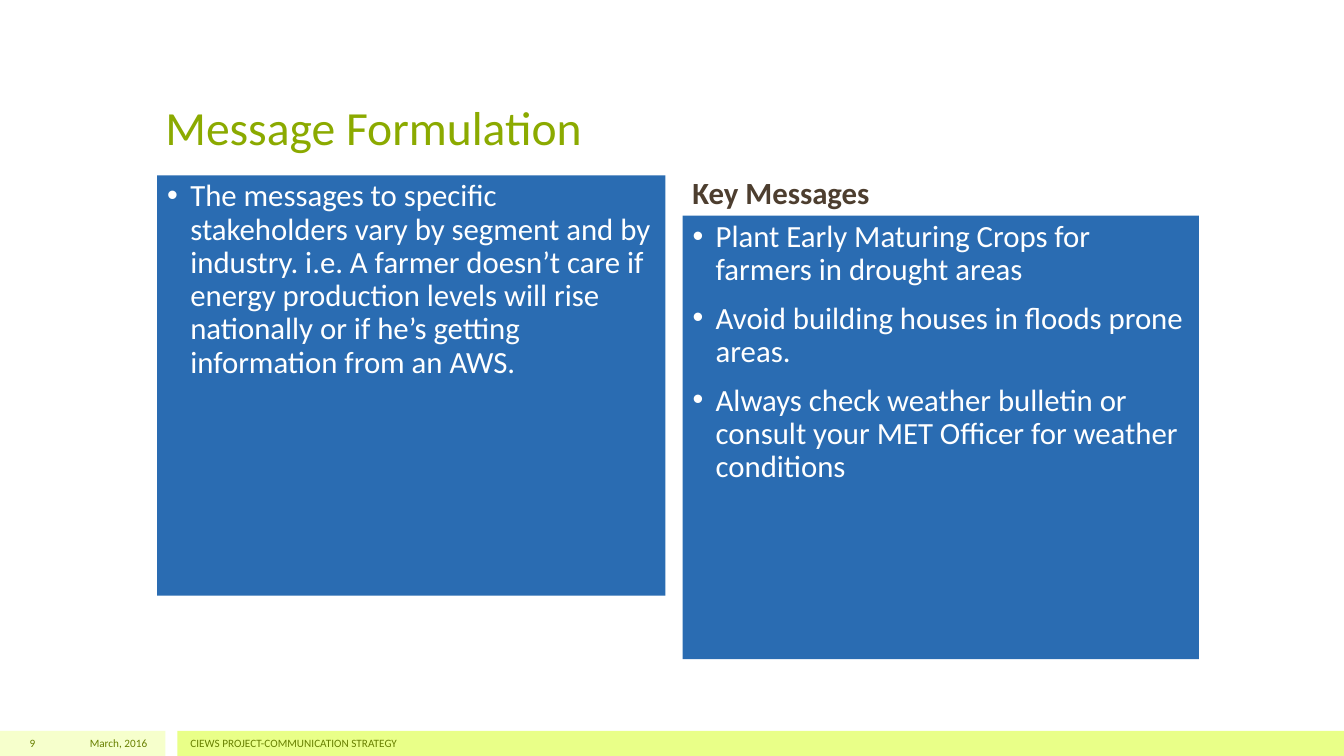
from lxml import etree
from pptx import Presentation
from pptx import util as u
from pptx.dml.color import RGBColor
from pptx.enum import shapes, text
from pptx.oxml import ns

PALE_LIME = RGBColor(0xF6, 0xFF, 0xCC)
LIME = RGBColor(0xE9, 0xFF, 0x88)
TITLE_GREEN = RGBColor(0x8B, 0xAA, 0x00)
FOOTER_GREEN = RGBColor(0x68, 0x80, 0x00)
PANEL_BLUE = RGBColor(0x2A, 0x6C, 0xB2)
BROWN = RGBColor(0x4D, 0x3E, 0x2F)
WHITE = RGBColor(0xFF, 0xFF, 0xFF)

WIDTH, HEIGHT = 13.33, 7.5
FOOTER_HEIGHT = HEIGHT / 30
FOOTER_TOP = HEIGHT - FOOTER_HEIGHT
LEFT_COLUMN, RIGHT_COLUMN = 1.56, 6.77
COLUMN_WIDTH = 5.04
PANEL_TOP = 2.14

presentation = Presentation()
presentation.slide_width = u.Inches(WIDTH)
presentation.slide_height = u.Inches(HEIGHT)
slide = presentation.slides.add_slide(presentation.slide_layouts[5])


def add_box(left, top, width, height, fill=None):
    """Add a filled rectangle, or a text box when there is no fill."""
    place = [u.Inches(length) for length in (left, top, width, height)]
    if fill is None:
        return slide.shapes.add_textbox(*place)
    shape = slide.shapes.add_shape(shapes.MSO_SHAPE.RECTANGLE, *place)
    shape.shadow.inherit = False
    shape.fill.solid()
    shape.fill.fore_color.rgb = fill
    shape.line.fill.background()
    return shape


def write(shape, lines, size, color, anchor, align=text.PP_ALIGN.LEFT):
    frame = shape.text_frame
    frame.word_wrap = True
    frame.auto_size = text.MSO_AUTO_SIZE.NONE
    frame.vertical_anchor = anchor
    frame.text = "\n".join(lines)
    for paragraph in frame.paragraphs:
        paragraph.alignment = align
        paragraph.font.name = "Calibri"
        paragraph.font.size = u.Pt(size)
        paragraph.font.color.rgb = color
    return frame.paragraphs


# Footer bars and their labels
add_box(0, FOOTER_TOP, 1.64, FOOTER_HEIGHT, PALE_LIME)
add_box(1.76, FOOTER_TOP, WIDTH - 1.76, FOOTER_HEIGHT, LIME)
footer_labels = [
    (0, 0.45, "9", text.PP_ALIGN.RIGHT),
    (0.47, 1.09, "March, 2016", text.PP_ALIGN.RIGHT),
    (1.79, 10, "CIEWS PROJECT-COMMUNICATION STRATEGY", text.PP_ALIGN.LEFT),
]
for left, width, label, align in footer_labels:
    box = add_box(left, FOOTER_TOP, width, FOOTER_HEIGHT)
    write(box, [label], 8, FOOTER_GREEN, text.MSO_ANCHOR.MIDDLE, align)

# Title
title = slide.shapes.title
title.left, title.top = u.Inches(1.54), u.Inches(0.3)
title.width, title.height = u.Inches(10.25), u.Inches(1.29)
write(title, ["Message Formulation"], 34, TITLE_GREEN, text.MSO_ANCHOR.BOTTOM)

# Bulleted panels
panels = [
    (LEFT_COLUMN, 1.74, COLUMN_WIDTH, 4.17, [
        "The messages to specific stakeholders vary by segment and by industry. "
        "i.e. A farmer doesn’t care if energy production levels will rise "
        "nationally or if he’s getting information from an AWS.",
    ]),
    (RIGHT_COLUMN, PANEL_TOP, 5.12, 4.4, [
        "Plant Early Maturing Crops for farmers in drought areas",
        "Avoid building houses in floods prone areas.",
        "Always check weather bulletin or consult your MET Officer for weather conditions",
    ]),
]
for left, top, width, height, messages in panels:
    panel = add_box(left, top, width, height, PANEL_BLUE)
    for paragraph in write(panel, messages, 22, WHITE, text.MSO_ANCHOR.TOP):
        paragraph.line_spacing = 0.9
        paragraph.space_before = u.Pt(11)
        properties = paragraph._p.get_or_add_pPr()
        properties.set("marL", str(u.Inches(0.23)))
        properties.set("indent", str(-u.Inches(0.23)))
        font = etree.Element(ns.qn("a:buFont"), typeface="Arial")
        bullet = etree.Element(ns.qn("a:buChar"), char="•")
        properties.find(ns.qn("a:spcBef")).addnext(font)
        font.addnext(bullet)

# Heading of the right column
heading = add_box(RIGHT_COLUMN, PANEL_TOP - 0.9, COLUMN_WIDTH, 0.9)
paragraph = write(heading, ["Key Messages"], 22, BROWN, text.MSO_ANCHOR.BOTTOM)[0]
paragraph.font.bold = True
paragraph.line_spacing = 0.9

presentation.save("out.pptx")
